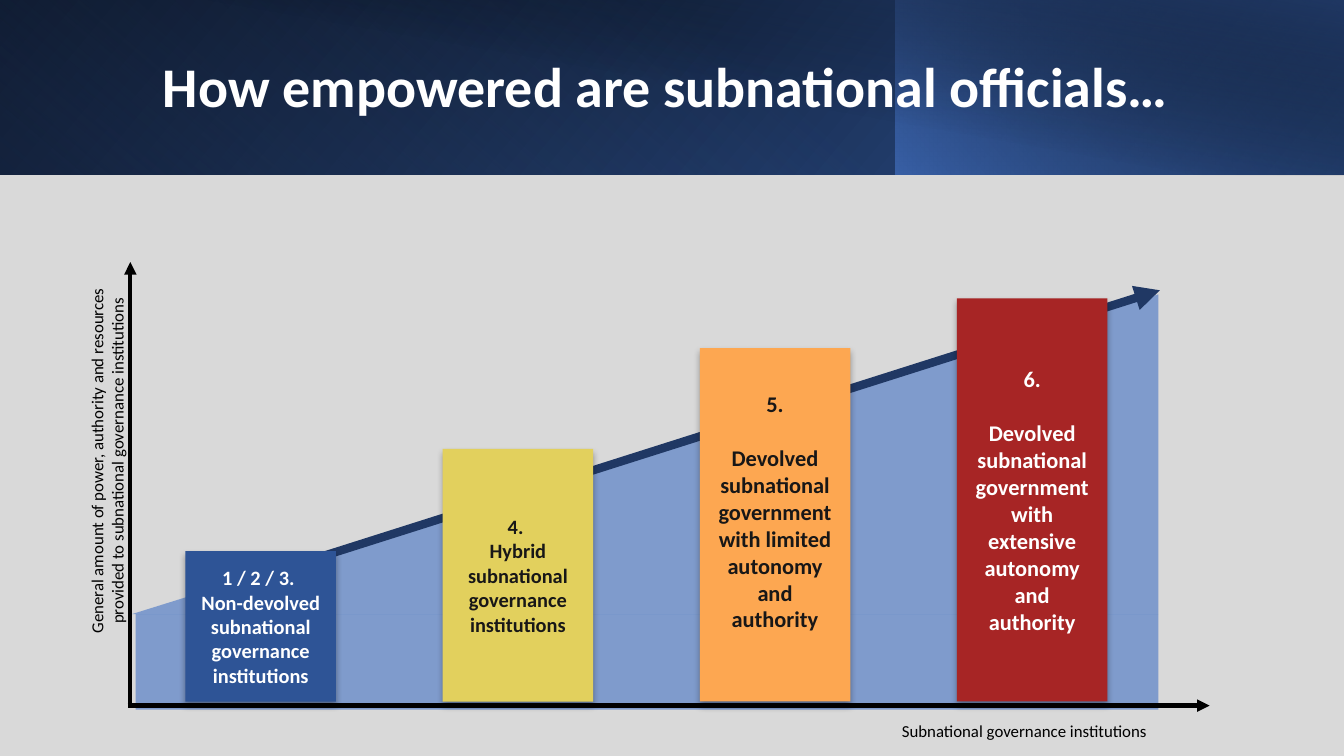
from pptx import Presentation
from pptx import util as u
from pptx.dml.color import RGBColor
from pptx.enum import shapes, text
from pptx.oxml import parse_xml
from pptx.oxml.ns import nsdecls, qn
from lxml import etree

THEME = {
    "font": "Calibri",
    "title_size": 30, "label_size": 9, "small_size": 10.9, "large_size": 12,
    "background": "D9D9D9", "white": "FFFFFF", "black": "000000", "ink": "181717",
    "navy": "203864", "blue": "4472C4", "deep_blue": "2F5597",
    "bar_blue": "2E5496", "yellow": "E2D05D", "orange": "FDA751", "red": "A72525",
}

SLIDE_WIDTH = 10
SLIDE_HEIGHT = SLIDE_WIDTH * 9 / 16

TITLE = "How empowered are subnational officials… "
Y_LABEL = ("General amount of power, authority and resources "
           "provided to subnational governance institutions")
X_LABEL = "Subnational governance institutions"

HEADER = [
    ((0, 0, 10, 1.3), 140, 0, True, [(0, "black", 100), (100, "deep_blue", 100)]),
    ((0, 0, 6.66, 1.3), 230, 180, True, [(20, "blue", 0), (100, "navy", 55)]),
    ((6.66, 0, 3.34, 1.3), 220, 0, True, [(0, "blue", 66), (100, "black", 30)]),
    ((0.38, 0, 9.62, 1.31), 280, 0, False, [(50, "black", 0), (99, "navy", 52)]),
]

ARROWS = [
    ((1.42, 4.45), (8.63, 2.16), "navy", 4.5),
    ((0.95, 5.25), (9, 5.25), "black", 2.25),
    ((0.97, 5.24), (0.97, 1.95), "black", 2.25),
]

BARS = [
    ("1 / 2 / 3. ", "Non-devolved subnational governance institutions",
     1.12, "bar_blue", "white", "small_size", 0, 0.05),
    ("4. ", "Hybrid subnational governance institutions",
     1.88, "yellow", "ink", "small_size", 0, 0.05),
    ("5.", "Devolved subnational government with limited autonomy and authority",
     2.63, "orange", "ink", "large_size", 14.6, 0.25),
    ("6.", "Devolved subnational government with extensive autonomy and authority",
     3, "red", "white", "large_size", 14.6, 0.05),
]
BAR_LEFT, BAR_RIGHTMOST, BAR_WIDTH, BAR_BOTTOM = 1.38, 7.12, 1.12, 5.22
BAR_STEP = (BAR_RIGHTMOST - BAR_LEFT) / (len(BARS) - 1)

SHADOW = (f'<a:effectLst {nsdecls("a")}><a:outerShdw blurRad="44450" dist="27940" '
          'dir="5400000" algn="ctr" rotWithShape="0"><a:srgbClr val="000000">'
          '<a:alpha val="32000"/></a:srgbClr></a:outerShdw></a:effectLst>')


def color(name):
    return RGBColor.from_string(THEME[name])


def set_alpha(color_element, percent):
    if percent < 100:
        etree.SubElement(color_element, qn("a:alpha"), val=str(percent * 1000))


def add_shape(slide, kind, box, flip=False):
    shape = slide.shapes.add_shape(kind, *map(u.Inches, box))
    shape.shadow.inherit = False
    shape.line.fill.background()
    if flip:
        shape._element.spPr.find(qn("a:xfrm")).set("flipH", "1")
    return shape


def fill_solid(shape, name, opacity=100):
    shape.fill.solid()
    shape.fill.fore_color.rgb = color(name)
    set_alpha(shape._element.spPr.find(".//" + qn("a:srgbClr")), opacity)


def fill_gradient(shape, angle, stops):
    shape.fill.gradient()
    shape.fill.gradient_angle = 360 - angle
    for stop, (position, name, _) in zip(shape.fill.gradient_stops, stops):
        stop.color.rgb = color(name)
        stop.position = position / 100
    elements = shape._element.spPr.findall(".//" + qn("a:srgbClr"))
    for element, (_, _, opacity) in zip(elements, stops):
        set_alpha(element, opacity)


def write(shape, lines, size, name, bold=False):
    frame = shape.text_frame
    frame.word_wrap = True
    frame.text = "\n".join(lines)
    for paragraph in frame.paragraphs:
        paragraph.alignment = text.PP_ALIGN.CENTER
        for run in paragraph.runs:
            run.font.name = THEME["font"]
            run.font.size = u.Pt(THEME[size])
            run.font.bold = bold
            run.font.color.rgb = color(name)
    return frame


def add_label(slide, box, content, size="label_size", name="black", bold=False):
    shape = slide.shapes.add_textbox(*map(u.Inches, box))
    write(shape, [content], size, name, bold)
    return shape


def add_arrow(slide, start, end, name, width):
    arrow = slide.shapes.add_connector(
        shapes.MSO_CONNECTOR.STRAIGHT, *map(u.Inches, start + end))
    arrow.line.color.rgb = color(name)
    arrow.line.width = u.Pt(width)
    etree.SubElement(arrow.line._get_or_add_ln(), qn("a:tailEnd"), type="triangle")
    etree.SubElement(arrow._element.spPr, qn("a:effectLst"))


def add_bar(slide, index, bar):
    number, caption, height, fill, ink, size, gap, bottom_inset = bar
    left = BAR_LEFT + index * BAR_STEP
    shape = add_shape(slide, shapes.MSO_SHAPE.RECTANGLE,
                      (left, BAR_BOTTOM - height, BAR_WIDTH, height))
    fill_solid(shape, fill)
    properties = shape._element.spPr
    properties.replace(properties.find(qn("a:effectLst")), parse_xml(SHADOW))
    frame = write(shape, [number, caption], size, ink, True)
    frame.vertical_anchor = text.MSO_ANCHOR.MIDDLE
    frame.margin_bottom = u.Inches(bottom_inset)
    frame.paragraphs[1].space_before = u.Pt(gap)


def main():
    presentation = Presentation()
    presentation.slide_width = u.Inches(SLIDE_WIDTH)
    presentation.slide_height = u.Inches(SLIDE_HEIGHT)
    slide = presentation.slides.add_slide(presentation.slide_layouts[6])
    slide.background.fill.solid()
    slide.background.fill.fore_color.rgb = color("background")

    for box, angle, rotation, flip, stops in HEADER:
        panel = add_shape(slide, shapes.MSO_SHAPE.RECTANGLE, box, flip)
        panel.rotation = rotation
        fill_gradient(panel, angle, stops)

    title = add_label(slide, (0.65, 0.24, 8.7, 0.85), TITLE, "title_size", "white", True)
    title.text_frame.vertical_anchor = text.MSO_ANCHOR.MIDDLE
    title.text_frame.paragraphs[0].line_spacing = 0.9

    y_label = add_label(slide, (-0.79, 3.23, 3.17, 0.4), Y_LABEL)
    y_label.rotation = 270
    add_label(slide, (5.86, 5.31, 3.52, 0.25), X_LABEL)

    slope = add_shape(slide, shapes.MSO_SHAPE.RIGHT_TRIANGLE, (0.98, 2.19, 7.64, 2.38), True)
    base = add_shape(slide, shapes.MSO_SHAPE.RECTANGLE, (1.01, 4.57, 7.61, 0.71))
    for area in (slope, base):
        fill_solid(area, "blue", 60)

    for arrow in ARROWS:
        add_arrow(slide, *arrow)
    for index, bar in enumerate(BARS):
        add_bar(slide, index, bar)

    presentation.save("out.pptx")


if __name__ == "__main__":
    main()
